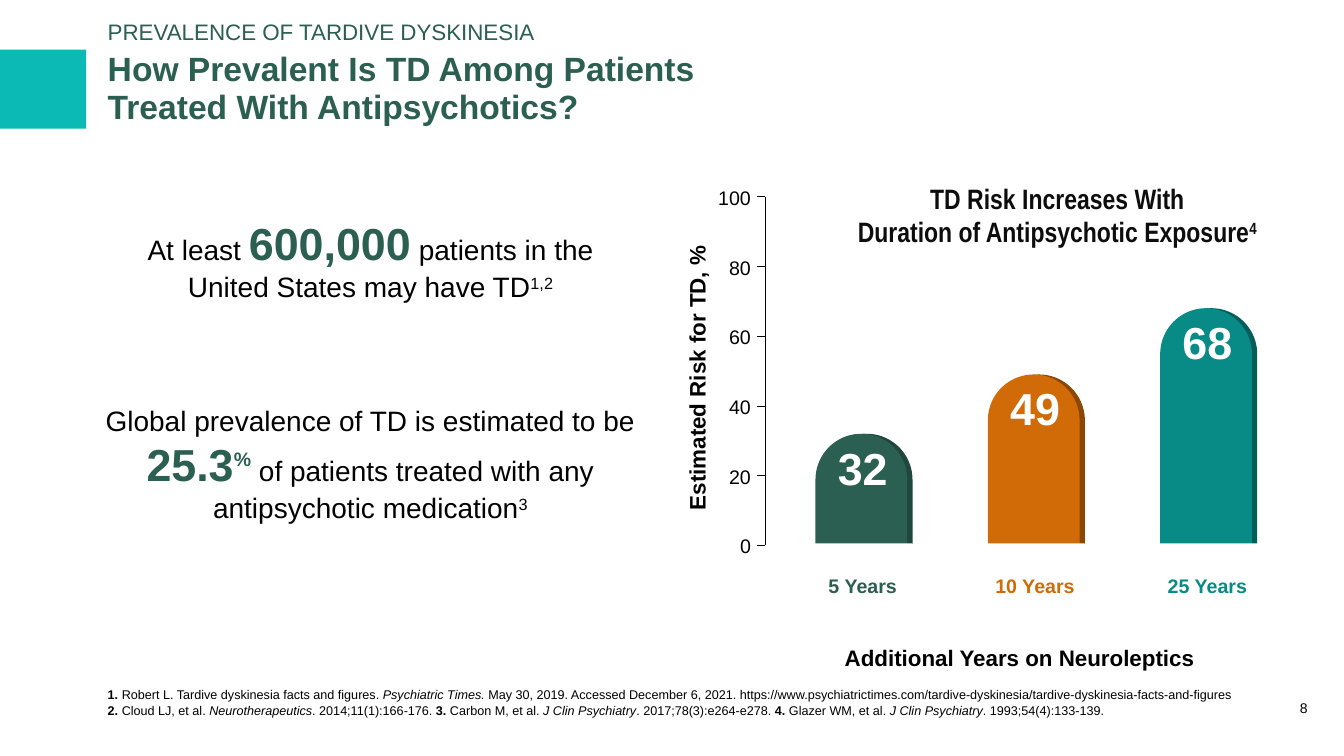
import dataclasses

import pptx
import pptx.dml.color
import pptx.enum.shapes
import pptx.enum.text
import pptx.oxml.ns
import pptx.shapes.base
import pptx.slide
import pptx.util
import lxml.etree

Pt = pptx.util.Pt
Align = pptx.enum.text.PP_ALIGN
Anchor = pptx.enum.text.MSO_ANCHOR
Shape = pptx.enum.shapes.MSO_SHAPE

COLORS = {
    "accent": "0BBAB4", "green": "2B5F51", "green_dark": "20473D",
    "orange": "D06B08", "orange_dark": "8A4705",
    "teal": "088B87", "teal_dark": "055D5A",
    "black": "000000", "near_black": "0D0D0D", "white": "FFFFFF",
}


@dataclasses.dataclass(frozen=True)
class Run:
    text: str
    size: float
    color: str = "black"
    bold: bool = False
    italic: bool = False
    raised: int = 0
    font: str = "Arial"


@dataclasses.dataclass(frozen=True)
class TextBox:
    left: float
    top: float
    width: float
    height: float
    paragraphs: list[list[Run]]
    align: Align = Align.CENTER
    anchor: Anchor = Anchor.TOP
    margins: tuple[float, float] = (7.2, 3.6)
    spacing: float | pptx.util.Length = 1.0
    wrap: bool = True
    rotation: float = 0


@dataclasses.dataclass(frozen=True)
class Bar:
    value: int
    label: str
    color: str
    bottom: float


AXIS_X, AXIS_ZERO, POINTS_PER_UNIT = 546.5, 389.5, 2.49
TICK_LENGTH, TICK_LABEL_RIGHT, DIGIT_WIDTH = 5.8, 536.4, 7.9
BAR_LEFT, BAR_PITCH, BAR_WIDTH, BAR_DEPTH = 582.5, 123.1, 65.5, 3.8
LABEL_WIDTH, VALUE_WIDTH = 94.3, 43.9

BARS = [
    Bar(32, "5 Years", "green", 399.6),
    Bar(49, "10 Years", "orange", 416.9),
    Bar(68, "25 Years", "teal", 416.9),
]

REFERENCES = [
    [
        Run("1. ", 9, bold=True),
        Run("Robert L. Tardive dyskinesia facts and figures. ", 9),
        Run("Psychiatric Times. ", 9, italic=True),
        Run("May 30, 2019. Accessed December 6, 2021. https://www.psychiatrictimes.com/"
            "tardive-dyskinesia/tardive-dyskinesia-facts-and-figures", 9),
    ],
    [
        Run("2. ", 9, bold=True),
        Run("Cloud LJ, et al. ", 9),
        Run("Neurotherapeutics", 9, italic=True),
        Run(". 2014;11(1):166-176. ", 9),
        Run("3.", 9, bold=True),
        Run(" Carbon M, et al. ", 9),
        Run("J Clin Psychiatry", 9, italic=True),
        Run(". 2017;78(3):e264-e278. ", 9),
        Run("4. ", 9, bold=True),
        Run("Glazer WM, et al. ", 9),
        Run("J Clin Psychiatry", 9, italic=True),
        Run(". 1993;54(4):133-139.", 9),
    ],
]

TEXT_BOXES = [
    TextBox(77, 28.1, 709.9, 71.3,
            [[Run("How Prevalent Is TD Among Patients\nTreated With Antipsychotics?",
                  24, "green", True)]],
            Align.LEFT, Anchor.MIDDLE, (0, 0), 0.95),
    TextBox(919.4, 481, 23.8, 31, [[Run("8", 10)]],
            anchor=Anchor.BOTTOM, margins=(0, 0), spacing=0.95),
    TextBox(77, 13, 738.7, 20.2, [[Run("PREVALENCE OF TARDIVE DYSKINESIA", 16, "green")]],
            Align.LEFT, Anchor.MIDDLE, (0, 0), 0.95),
    TextBox(70.6, 150.5, 388.1, 70.6, [[
        Run("At least ", 20), Run("600,000", 32, "green", True),
        Run(" patients in the\nUnited States may have TD", 20), Run("1,2", 20, raised=30),
    ]]),
    TextBox(62.6, 284.4, 403.9, 94.3, [[
        Run("Global prevalence of TD is estimated to be\n", 20),
        Run("25.3", 32, "green", True), Run("%", 24, "green", True, raised=46),
        Run(" of patients treated with any antipsychotic medication", 20),
        Run("3", 20, raised=30),
    ]]),
    TextBox(77, 491, 832.3, 21.6, REFERENCES, Align.LEFT, Anchor.BOTTOM, (0, 0)),
    TextBox(393.1, 256.7, 209.5, 26.6, [[Run("Estimated Risk for TD, %", 16, bold=True)]],
            rotation=270),
    TextBox(581.8, 456.5, 293, 26.6, [[Run("Additional Years on Neuroleptics", 16, bold=True)]]),
    TextBox(565.9, 126, 378.7, 55.4, [[
        Run("TD Risk Increases With\nDuration of Antipsychotic Exposure", 20, "near_black", True,
            font="Arial Narrow"),
        Run("4", 20, "near_black", True, raised=30, font="Arial Narrow"),
    ]]),
]


def rgb(color: str) -> pptx.dml.color.RGBColor:
    return pptx.dml.color.RGBColor.from_string(COLORS[color])


def write_run(paragraph, run: Run) -> None:
    values = {"name": run.font, "size": Pt(run.size), "bold": run.bold, "italic": run.italic}
    for index, line in enumerate(run.text.split("\n")):
        if index:
            paragraph.add_line_break()
        if not line:
            continue
        text_run = paragraph.add_run()
        text_run.text = line
        for name, value in values.items():
            setattr(text_run.font, name, value)
        text_run.font.color.rgb = rgb(run.color)
        if run.raised:
            text_run._r.get_or_add_rPr().set("baseline", str(run.raised * 1000))


def write_text(shape: pptx.shapes.base.BaseShape, box: TextBox) -> None:
    frame = shape.text_frame
    horizontal, vertical = (Pt(margin) for margin in box.margins)
    frame_values = {
        "word_wrap": box.wrap, "vertical_anchor": box.anchor,
        "margin_left": horizontal, "margin_right": horizontal,
        "margin_top": vertical, "margin_bottom": vertical,
    }
    for name, value in frame_values.items():
        setattr(frame, name, value)
    for index, runs in enumerate(box.paragraphs):
        paragraph = frame.add_paragraph() if index else frame.paragraphs[0]
        paragraph.alignment = box.align
        paragraph.line_spacing = box.spacing
        for run in runs:
            write_run(paragraph, run)


def add_text_box(slide: pptx.slide.Slide, box: TextBox) -> None:
    shape = slide.shapes.add_textbox(Pt(box.left), Pt(box.top), Pt(box.width), Pt(box.height))
    shape.rotation = box.rotation
    write_text(shape, box)


def add_block(slide: pptx.slide.Slide, kind: Shape, left: float, top: float, width: float,
              height: float, color: str, adjustments: tuple[float, ...] = ()):
    shape = slide.shapes.add_shape(kind, Pt(left), Pt(top), Pt(width), Pt(height))
    shape.shadow.inherit = False
    shape.fill.solid()
    shape.fill.fore_color.rgb = rgb(color)
    shape.line.fill.background()
    for index, value in enumerate(adjustments):
        shape.adjustments[index] = value
    return shape


def add_line(slide: pptx.slide.Slide, x1: float, y1: float, x2: float, y2: float) -> None:
    line = slide.shapes.add_connector(
        pptx.enum.shapes.MSO_CONNECTOR.STRAIGHT, Pt(x1), Pt(y1), Pt(x2), Pt(y2))
    line.line.color.rgb = rgb("black")
    line.line.width = Pt(0.5)
    lxml.etree.SubElement(line._element.spPr, pptx.oxml.ns.qn("a:effectLst"))


def add_axis(slide: pptx.slide.Slide) -> None:
    add_line(slide, AXIS_X, AXIS_ZERO, AXIS_X, AXIS_ZERO - 100 * POINTS_PER_UNIT)
    for value in range(0, 101, 20):
        y = AXIS_ZERO - value * POINTS_PER_UNIT
        add_line(slide, AXIS_X - TICK_LENGTH, y, AXIS_X, y)
        width = DIGIT_WIDTH * len(str(value))
        add_text_box(slide, TextBox(
            TICK_LABEL_RIGHT - width, y - 8, width, 17.2, [[Run(str(value), 14)]],
            Align.RIGHT, Anchor.MIDDLE, (0, 0), wrap=False))


def add_bar(slide: pptx.slide.Slide, bar: Bar, left: float) -> None:
    top = AXIS_ZERO - bar.value * POINTS_PER_UNIT
    center = left + BAR_WIDTH / 2
    for offset, color in ((BAR_DEPTH, bar.color + "_dark"), (0, bar.color)):
        add_block(slide, Shape.ROUND_2_SAME_RECTANGLE, left + offset, top, BAR_WIDTH,
                  bar.bottom - top, color, (0.5, 0))
    add_text_box(slide, TextBox(
        center - VALUE_WIDTH / 2 + 1, top + 9, VALUE_WIDTH, 30,
        [[Run(str(bar.value), 32, "white", True)]],
        anchor=Anchor.MIDDLE, margins=(0, 3.6), wrap=False))
    label = TextBox(center - LABEL_WIDTH / 2 + 1, 388.1, LABEL_WIDTH, 62.6,
                    [[Run(bar.label, 14, bar.color, True)]],
                    anchor=Anchor.MIDDLE, margins=(0, 0), spacing=Pt(15), wrap=False)
    write_text(add_block(slide, Shape.ROUNDED_RECTANGLE, label.left, label.top, label.width,
                         label.height, "white", (0.208,)), label)


def main() -> None:
    presentation = pptx.Presentation()
    presentation.slide_width, presentation.slide_height = Pt(960), Pt(540)
    slide = presentation.slides.add_slide(presentation.slide_layouts[6])
    add_block(slide, Shape.RECTANGLE, 0, 35.5, 61.5, 56.5, "accent")
    add_axis(slide)
    for index, bar in enumerate(BARS):
        add_bar(slide, bar, BAR_LEFT + index * BAR_PITCH)
    for box in TEXT_BOXES:
        add_text_box(slide, box)
    presentation.save("out.pptx")


if __name__ == "__main__":
    main()
